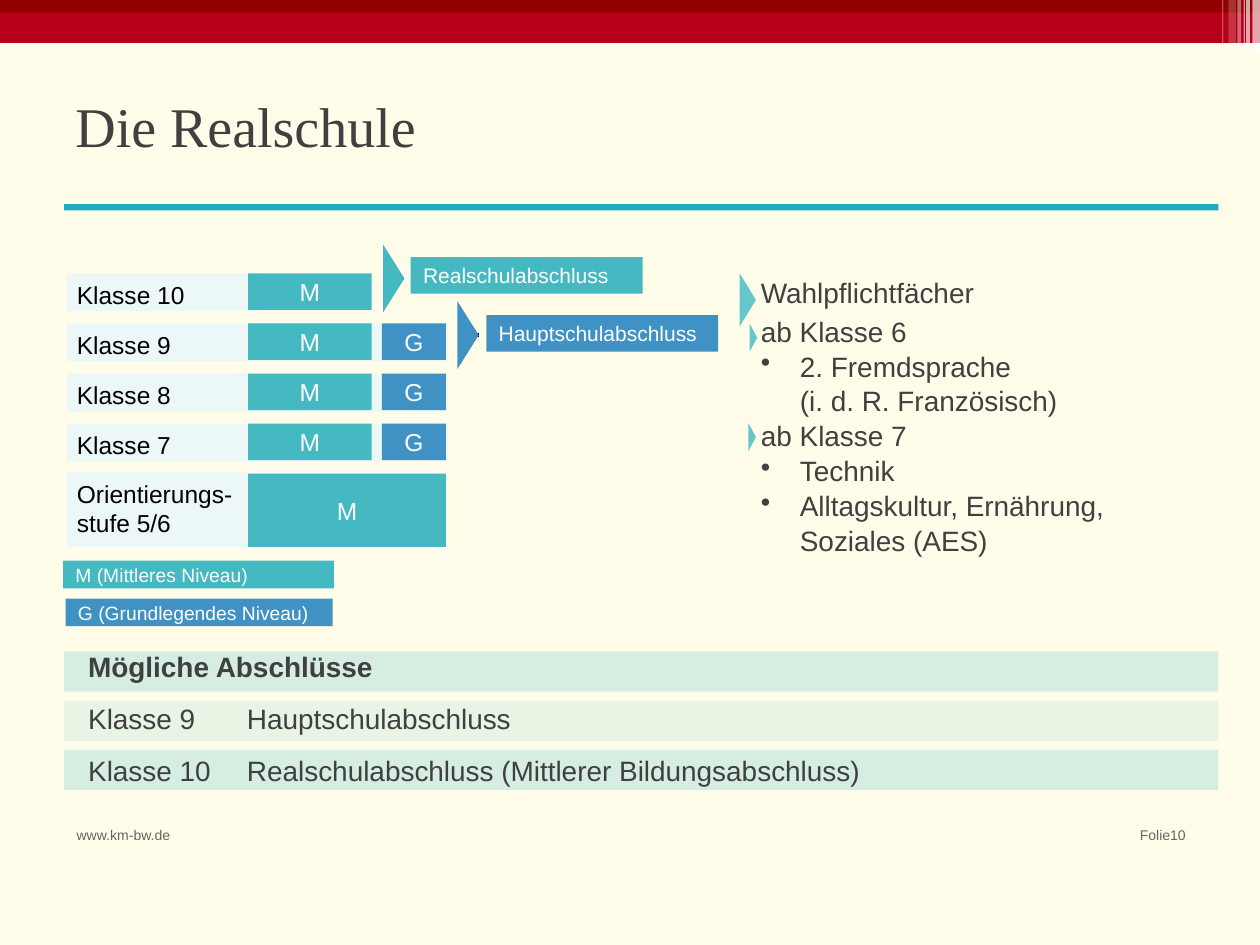
"""Builds the slide on the Realschule: class levels, electives and leaving certificates."""
import copy
from lxml import etree
from pptx import Presentation, util as u
from pptx.dml.color import RGBColor
from pptx.enum import shapes, text
from pptx.oxml.ns import qn

THEME = {
    "sans": "Arial", "serif": "Times New Roman",
    "back": "FFFDE9", "red": "B70017", "dark": "920000", "white": "FFFFFF",
    "black": "000000", "ink": "404040", "grey": "646464", "rule": "1EAEBD",
    "pale": "ECF7F7", "M": "44B9C2", "G": "4192C4", "light": "FEFEFE",
    "title": 32, "body": 16, "level": 14, "exam": 12, "key": 11, "foot": 8,
}
TITLE = "Die Realschule"
STRIPES = [(9.89, 0.03, 0.43, 65), (9.94, 0.06, 0.43, 65), (9.7, 0.01, 0.64, 30),
           (9.87, 0.01, 0.68, 60), (9.75, 0.06, 0.43, 20), (9.82, 0.03, 0.43, 40)]
BANDS = [18, 10, 18]
LEVELS = [("Klasse 10", 1.54, ["M"]), ("Klasse 9", 3.02, ["M", "G"]),
          ("Klasse 8", 3.02, ["M", "G"]), ("Klasse 7", 3.02, ["M", "G"])]
ENTRY = ["Orientierungs-", "stufe 5/6"]
COLS = {"M": (1.97, 0.98), "G": (3.03, 0.51)}
EXAMS = [("Realschulabschluss", "M", 3.26, 2.04, 3.04, 1.94),
         ("Hauptschulabschluss", "G", 3.86, 2.5, 3.63, 2.39)]
KEYS = [("M (Mittleres Niveau)", "M", 0.5, 4.45, 2.15),
        ("G (Grundlegendes Niveau)", "G", 0.52, 4.75, 2.12)]
PLATES = [(5.87, 2.17, 0.13, 0.42), (5.95, 2.57, 0.06, 0.22), (5.94, 3.36, 0.06, 0.22)]
COURSES = [("Wahlpflichtfächer", False), ("ab Klasse 6", False),
           ("2. Fremdsprache\v(i. d. R. Französisch)", True), ("ab Klasse 7", False),
           ("Technik", True), ("Alltagskultur, Ernährung,\vSoziales (AES)", True)]
GRADES = [("Mögliche Abschlüsse", ""), ("Klasse 9", "Hauptschulabschluss"),
          ("Klasse 10", "Realschulabschluss (Mittlerer Bildungsabschluss)")]
FEET = [("www.km-bw.de", 0.51, 1, "LEFT"), ("Folie10", 8.54, 0.97, "RIGHT")]

deck = Presentation()
deck.slide_width, deck.slide_height = u.Inches(10), u.Inches(7.5)
slide = deck.slides.add_slide(deck.slide_layouts[6])
slide.background.fill.solid()
slide.background.fill.fore_color.rgb = RGBColor.from_string(THEME["back"])


def place(*nums):
    return [u.Inches(n) for n in nums]


def write(frame, lines, size="body", color="ink", face="sans", bold=False,
          align="LEFT", anchor="TOP", wrap=True, inset=None, space=None, after=0):
    frame.word_wrap = wrap
    frame.vertical_anchor = text.MSO_ANCHOR[anchor]
    if inset is not None:
        for side in ("left", "right", "top", "bottom"):
            setattr(frame, f"margin_{side}", u.Inches(inset))
    for i, (words, dot) in enumerate(lines):
        para = frame.add_paragraph() if i else frame.paragraphs[0]
        para.text = words
        para.alignment = text.PP_ALIGN[align]
        if space:
            para.line_spacing = space
        if after and not i:
            para.space_after = u.Pt(after)
        if dot:
            props = para._p.get_or_add_pPr()
            props.set("marL", str(u.Inches(0.31)))
            props.set("indent", str(-u.Inches(0.31)))
            etree.SubElement(props, qn("a:buChar")).set("char", "•")
        for run in para.runs:
            font = run.font
            font.name, font.size, font.bold = THEME[face], u.Pt(THEME[size]), bold
            font.color.rgb = RGBColor.from_string(THEME[color])
        for brk in para._p.findall(qn("a:br")):
            brk.append(copy.deepcopy(para.runs[0]._r.rPr))


def paint(item, color, alpha=None):
    item.shadow.inherit = False
    item.fill.solid()
    item.fill.fore_color.rgb = RGBColor.from_string(THEME[color])
    item.line.fill.background()
    if alpha:
        tone = item._element.spPr.find(".//" + qn("a:srgbClr"))
        etree.SubElement(tone, qn("a:alpha")).set("val", str(alpha * 1000))
    return item


def block(x, y, w, h, color, alpha=None, kind="RECTANGLE"):
    item = slide.shapes.add_shape(shapes.MSO_SHAPE[kind], *place(x, y, w, h))
    return paint(item, color, alpha)


def label(words, x, y, w, h, **fmt):
    box = slide.shapes.add_textbox(*place(x, y, w, h))
    write(box.text_frame, [(words, False)], **fmt)


def badge(words, x, y, w, h, back, **fmt):
    item = block(x, y, w, h, back)
    write(item.text_frame, [(words, False)], anchor="MIDDLE", **fmt)


def arrow(x, y, color):
    tip, mid, low = x + 0.17, y + 0.27, y + 0.54
    line = slide.shapes.add_connector(
        shapes.MSO_CONNECTOR.STRAIGHT, *place(x + 0.04, mid, tip, mid))
    line.line.width = 0
    line.line.color.rgb = RGBColor.from_string(THEME["black"])
    etree.SubElement(line._element.spPr, qn("a:effectLst"))
    pen = slide.shapes.build_freeform(*place(x, y))
    pen.add_line_segments([place(tip, mid), place(x, low)], close=True)
    paint(pen.convert_to_shape(), color)


def frame():
    block(0, 0, 10, 0.34, "red")
    block(0, 0, 10, 0.1, "dark")
    for x, w, h, alpha in STRIPES:
        block(x, 0, w, h, "white", alpha)
    for words, x, w, align in FEET:
        label(words, x, 6.51, w, 0.39, size="foot", color="grey", align=align)
    label(TITLE, 0.5, 0.61, 9, 0.77, size="title", face="serif", anchor="MIDDLE")
    block(0.51, 1.62, 9.16, 0.05, "rule")


def grades():
    for i, alpha in enumerate(BANDS):
        block(0.51, 5.17 + 0.39 * i, 9.16, 0.32, "rule", alpha)
    grid = slide.shapes.add_table(3, 2, *place(0.6, 5.13, 8.68, 1.22)).table
    grid.first_row = grid.horz_banding = False
    style = grid._tbl.tblPr.find(qn("a:tableStyleId"))
    style.text = "{2D5ABB26-0587-4C30-8999-92F81FD0307C}"
    for col, w in zip(grid.columns, (1.26, 7.42)):
        col.width = u.Inches(w)
    grid.cell(0, 0).merge(grid.cell(0, 1))
    for i, row in enumerate(GRADES):
        grid.rows[i].height = u.Inches(0.41)
        for j, words in enumerate(row):
            cell = grid.cell(i, j)
            cell.fill.background()
            if words:
                write(cell.text_frame, [(words, False)], bold=i == 0)


def levels():
    step = (3.76 - 2.17) / len(LEVELS)
    side = {"size": "level", "color": "black", "inset": 0, "wrap": False}
    mark = {"size": "level", "color": "white", "align": "CENTER"}
    for i, (name, w, marks) in enumerate(LEVELS):
        y = 2.17 + step * i
        block(0.53, y, w, 0.3, "pale")
        label(name, 0.61, y + 0.05, 0.86, 0.24, **side)
        for kind in marks:
            x, wide = COLS[kind]
            badge(kind, x, y, wide, 0.29, kind, **mark)
    block(0.53, 3.75, 2.96, 0.59, "pale")
    for i, name in enumerate(ENTRY):
        label(name, 0.61, 3.8 + 0.23 * i, 1.31, 0.24, **side)
    badge("M", 1.97, 3.76, 1.57, 0.58, "M", **mark)


def extras():
    for words, kind, x, y, left, top in EXAMS:
        badge(words, x, y, 1.84, 0.29, kind, size="exam", color="white")
        arrow(left, top, kind)
    for words, kind, x, y, w in KEYS:
        badge(words, x, y, w, 0.22, kind, size="key", color="light")
    box = slide.shapes.add_textbox(*place(5.94, 2.17, 3.52, 2.26))
    write(box.text_frame, COURSES, anchor="MIDDLE", space=1.04, after=2)
    for spot in PLATES:
        block(*spot, "rule", 68, "PENTAGON").adjustments[0] = 0.99


frame()
grades()
levels()
extras()
deck.save("out.pptx")
